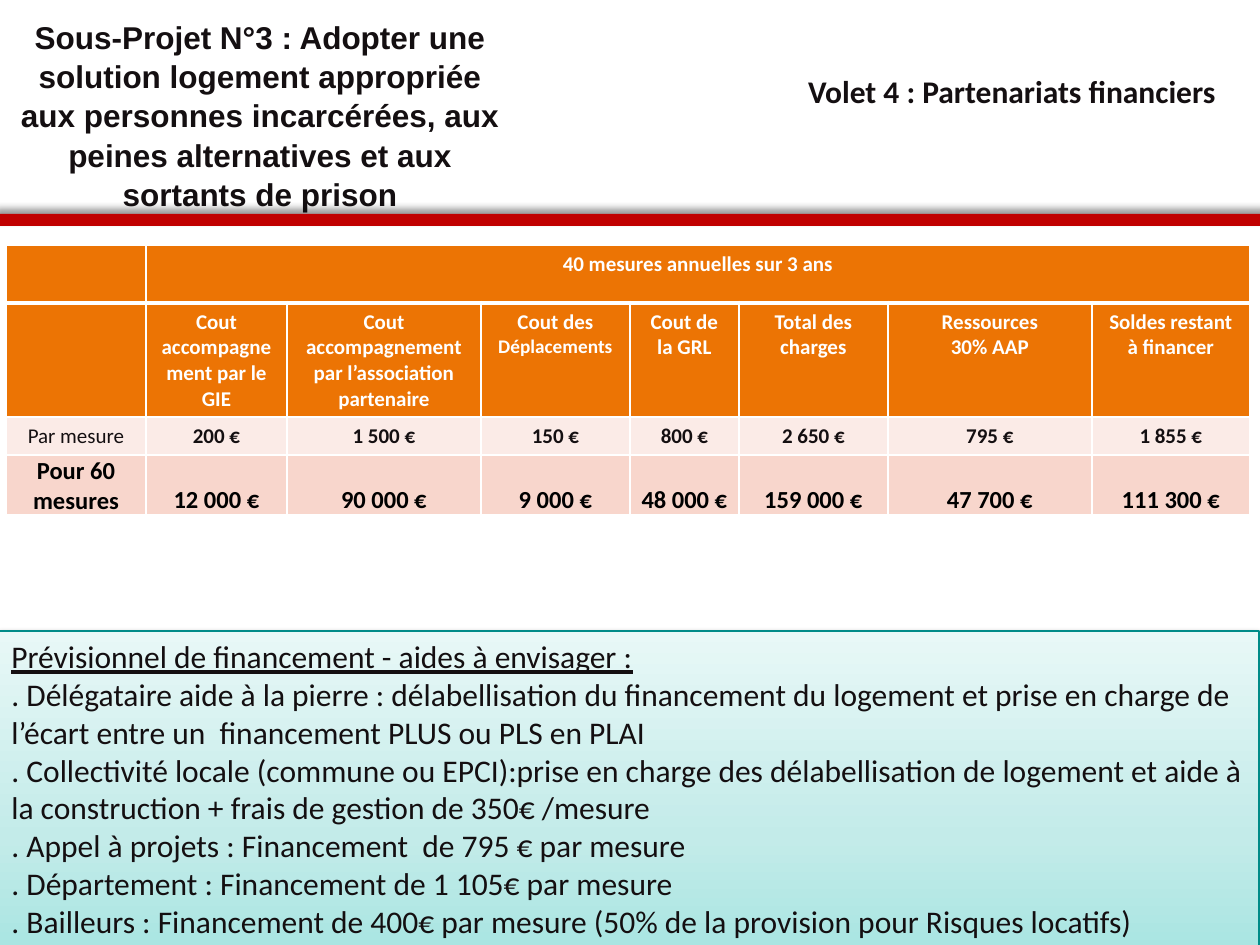
from dataclasses import dataclass

from lxml.etree import SubElement
from pptx import Presentation
from pptx.dml.color import RGBColor
from pptx.enum.shapes import MSO_SHAPE
from pptx.enum.text import MSO_ANCHOR, MSO_AUTO_SIZE, PP_ALIGN
from pptx.oxml.ns import qn
from pptx.util import Emu, Inches, Pt

INK = RGBColor(0x14, 0x0F, 0x11)
BLACK = RGBColor(0, 0, 0)
WHITE = RGBColor(0xFF, 0xFF, 0xFF)
RED = RGBColor(0xC0, 0x00, 0x00)
ORANGE = RGBColor(0xEC, 0x74, 0x04)
PALE_PINK = RGBColor(0xFB, 0xEB, 0xE7)
PINK = RGBColor(0xF8, 0xD6, 0xCC)
TEAL = RGBColor(0x00, 0x8B, 0x88)
AQUA = RGBColor(0xA9, 0xE5, 0xE2)
LIGHT_AQUA = RGBColor(0xC3, 0xEB, 0xE9)
PALE_AQUA = RGBColor(0xE8, 0xF8, 0xF7)

PX_PER_INCH = 126
COLUMN_WIDTHS = [140, 141, 194, 149, 109, 149, 204, 158]


@dataclass
class CostRow:
    height: int
    fill: RGBColor
    color: RGBColor
    texts: list[str]
    size: int = 12
    anchor: MSO_ANCHOR = MSO_ANCHOR.TOP
    tight: bool = False
    bottom_border: int = 1


@dataclass
class Shadow:
    alpha: int
    blur: float
    distance: float
    angle: int


COST_ROWS = [
    CostRow(58, ORANGE, WHITE, ["", "40 mesures annuelles sur 3 ans"] + [""] * 6,
            bottom_border=3),
    CostRow(114, ORANGE, WHITE, [
        "", "Cout accompagnement par le GIE",
        "Cout accompagnement par l’association partenaire",
        "Cout des ", "Cout de la GRL", "Total des charges",
        "Ressources\n30% AAP", "Soldes restant à financer"]),
    CostRow(38, PALE_PINK, INK, [
        "Par mesure", "200 €", "1 500 €", "150 €", "800 €", "2 650 €",
        "795 €", "1 855 €"], anchor=MSO_ANCHOR.MIDDLE, tight=True),
    CostRow(60, PINK, BLACK, [
        "Pour 60 mesures", "12 000 €", "90 000 €", "9 000 €", "48 000 €",
        "159 000 €", "47 700 €", "111 300 €"],
        size=14, anchor=MSO_ANCHOR.BOTTOM, tight=True),
]

FUNDING_LINES = [
    "Prévisionnel de financement - aides à envisager :",
    ". Délégataire aide à la pierre : délabellisation du financement du logement "
    "et prise en charge de l’écart entre un  financement PLUS ou PLS en PLAI",
    ". Collectivité locale (commune ou EPCI):prise en charge des délabellisation "
    "de logement et aide à la construction + frais de gestion de 350€ /mesure",
    ". Appel à projets : Financement  de 795 € par mesure",
    ". Département : Financement de 1 105€ par mesure",
    ". Bailleurs : Financement de 400€ par mesure (50% de la provision pour "
    "Risques locatifs)",
]


def px(length: int) -> Emu:
    return Emu(round(length * 914400 / PX_PER_INCH))


def format_text(frame, size: int, color: RGBColor, bold: bool = False,
                align=PP_ALIGN.CENTER, font: str = "Calibri") -> None:
    for paragraph in frame.paragraphs:
        paragraph.alignment = align
        for run in paragraph.runs:
            run.font.name = font
            run.font.size = Pt(size)
            run.font.bold = bold
            run.font.color.rgb = color


def add_rectangle(slide, left: int, top: int, width: int, height: int, shadow: Shadow):
    rectangle = slide.shapes.add_shape(
        MSO_SHAPE.RECTANGLE, px(left), px(top), px(width), px(height))
    rectangle.shadow.inherit = False
    effects = rectangle._element.spPr.find(qn("a:effectLst"))
    outer = SubElement(effects, qn("a:outerShdw"), blurRad=str(Pt(shadow.blur)),
                       dist=str(Pt(shadow.distance)), dir=str(shadow.angle * 60000),
                       rotWithShape="0")
    tint = SubElement(outer, qn("a:srgbClr"), val=str(BLACK))
    SubElement(tint, qn("a:alpha"), val=str(shadow.alpha * 1000))
    return rectangle


def fill_gradient(shape, stops: list[tuple[int, RGBColor]], angle: int) -> None:
    """Fill with any number of stops, given as percent and colour."""
    shape.fill.gradient()
    shape.fill.gradient_angle = angle
    stop_list = shape._element.spPr.find(qn("a:gradFill")).find(qn("a:gsLst"))
    for default_stop in list(stop_list):
        stop_list.remove(default_stop)
    for percent, color in stops:
        stop = SubElement(stop_list, qn("a:gs"), pos=str(percent * 1000))
        SubElement(stop, qn("a:srgbClr"), val=str(color))


def set_borders(cell, top: int, bottom: int) -> None:
    """Draw white borders; must run before the cell is filled."""
    properties = cell._tc.get_or_add_tcPr()
    for side, width in (("L", 1), ("R", 1), ("T", top), ("B", bottom)):
        line = SubElement(properties, qn(f"a:ln{side}"), w=str(Pt(width)))
        solid = SubElement(line, qn("a:solidFill"))
        SubElement(solid, qn("a:srgbClr"), val=str(WHITE))


def add_cost_table(slide, left: int, top: int) -> None:
    table = slide.shapes.add_table(
        len(COST_ROWS), len(COLUMN_WIDTHS), px(left), px(top),
        px(sum(COLUMN_WIDTHS)), px(sum(row.height for row in COST_ROWS))).table
    table.first_row = table.horz_banding = False
    for column, width in zip(table.columns, COLUMN_WIDTHS):
        column.width = px(width)
    table.cell(0, 1).merge(table.cell(0, len(COLUMN_WIDTHS) - 1))

    top_border = 1
    for r, row in enumerate(COST_ROWS):
        table.rows[r].height = px(row.height)
        for c, text in enumerate(row.texts):
            cell = table.cell(r, c)
            set_borders(cell, top_border, row.bottom_border)
            cell.fill.solid()
            cell.fill.fore_color.rgb = row.fill
            if text == "Par mesure":
                cell.text_frame.text = text
                format_text(cell.text_frame, row.size, row.color)
                continue
            cell.text_frame.text = text
            format_text(cell.text_frame, row.size, row.color, bold=True)
            cell.vertical_anchor = row.anchor
            if row.tight:
                cell.margin_left = cell.margin_right = cell.margin_top = Inches(0.01)
                cell.margin_bottom = 0
        top_border = row.bottom_border

    travel = table.cell(1, 3).text_frame
    travel.paragraphs[0].add_run().text = "Déplacements"
    format_text(travel, 12, WHITE, bold=True)
    travel.paragraphs[0].runs[1].font.size = Pt(11)


def add_title(slide) -> None:
    title = slide.shapes.title
    title.left, title.top, title.width, title.height = px(0), px(10), px(520), px(80)
    frame = title.text_frame
    frame.text = ("Sous-Projet N°3\u00a0: Adopter une solution logement appropriée aux "
                  "personnes incarcérées, aux peines alternatives et aux sortants de prison")
    frame.word_wrap = True
    frame.auto_size = MSO_AUTO_SIZE.NONE
    frame.vertical_anchor = MSO_ANCHOR.TOP
    frame.paragraphs[0].line_spacing = 1.04
    format_text(frame, 18, INK, bold=True, font="Arial")


def add_section_label(slide) -> None:
    label = slide.shapes.add_textbox(px(789), px(66), px(446), px(50)).text_frame
    label.word_wrap = True
    label.text = "Volet 4 : Partenariats financiers"
    format_text(label, 18, INK, bold=True)


def add_funding_box(slide) -> None:
    box = add_rectangle(slide, -1, 631, 1260, 318, Shadow(38, 3.1, 1.6, 90))
    fill_gradient(box, [(0, AQUA), (35, LIGHT_AQUA), (100, PALE_AQUA)], 90)
    box.line.color.rgb = TEAL
    box.line.width = Pt(0.75)
    frame = box.text_frame
    frame.word_wrap = True
    frame.vertical_anchor = MSO_ANCHOR.TOP
    frame.text = "\n".join(FUNDING_LINES)
    format_text(frame, 18, INK, align=PP_ALIGN.LEFT)
    frame.paragraphs[0].runs[0].font.underline = True


def main() -> None:
    presentation = Presentation()
    presentation.slide_width, presentation.slide_height = Inches(10), Inches(7.5)
    slide = presentation.slides.add_slide(presentation.slide_layouts[5])
    band = add_rectangle(slide, -5, 214, 1270, 12, Shadow(40, 4, 3, 270))
    band.fill.solid()
    band.fill.fore_color.rgb = RED
    band.line.fill.background()
    add_title(slide)
    add_section_label(slide)
    add_cost_table(slide, 6, 245)
    add_funding_box(slide)
    presentation.save("out.pptx")


if __name__ == "__main__":
    main()
